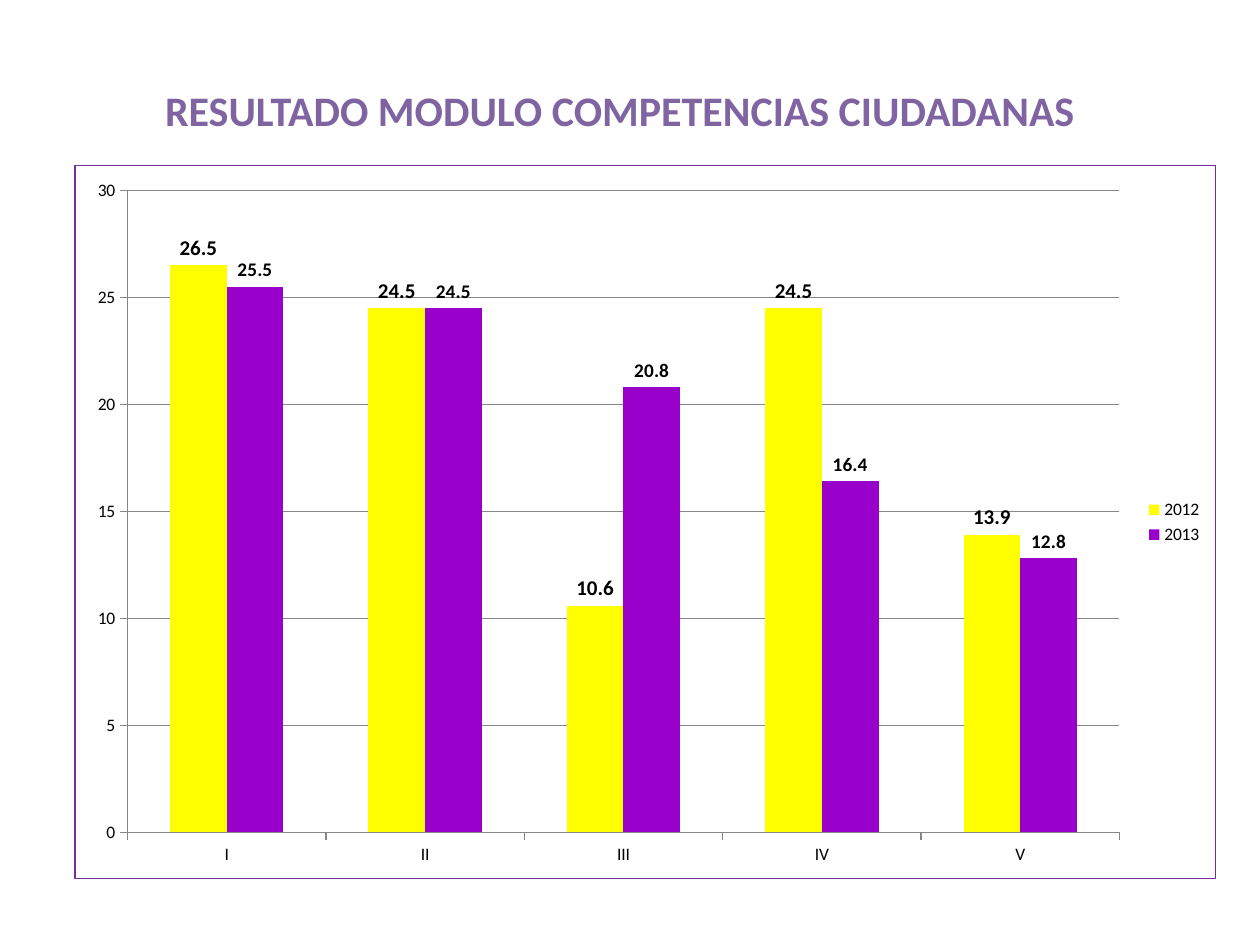
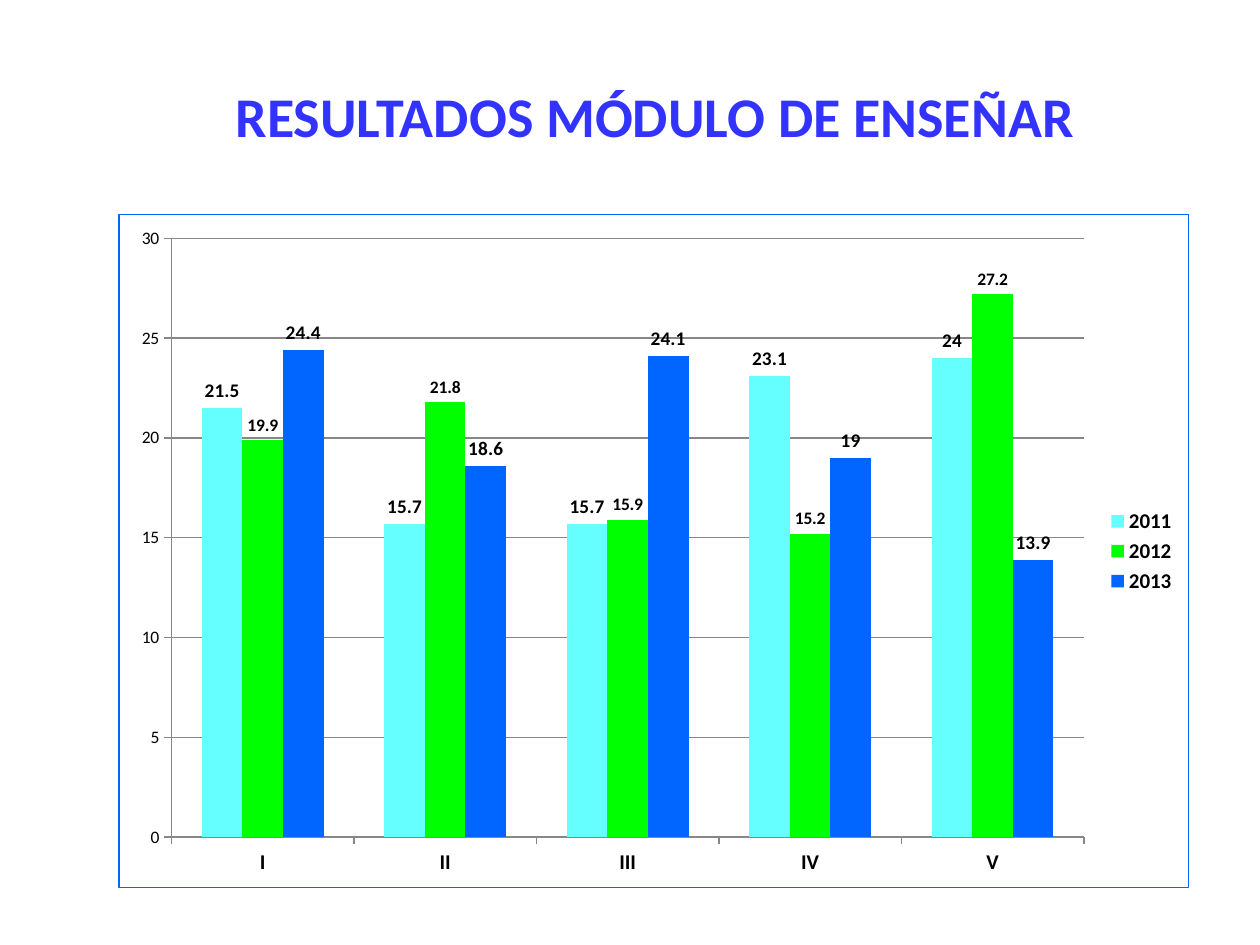
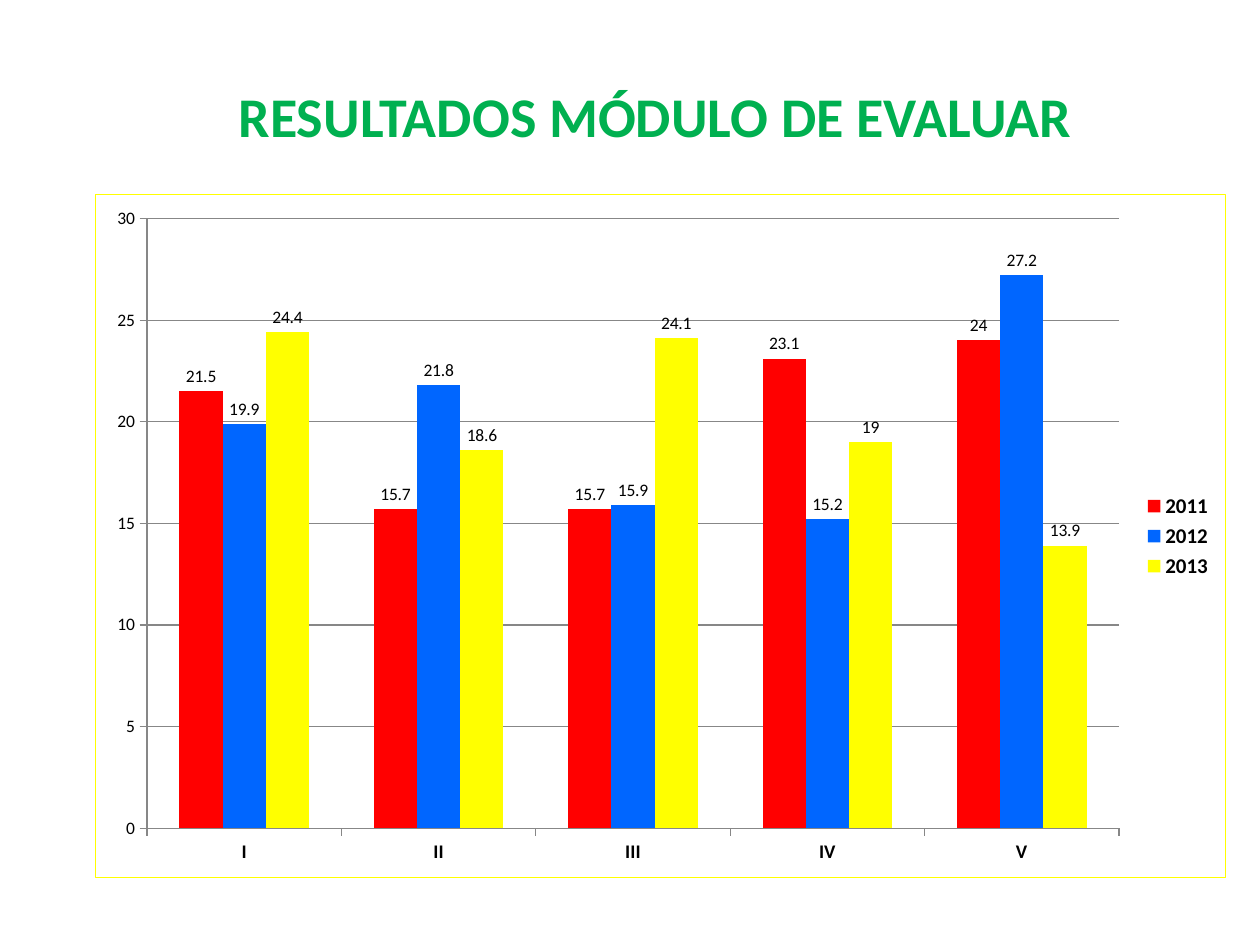
from pptx import Presentation
from pptx.chart.data import CategoryChartData
from pptx.dml.color import RGBColor
from pptx.enum.chart import XL_CHART_TYPE, XL_LABEL_POSITION, XL_LEGEND_POSITION, XL_TICK_MARK
from pptx.enum.text import MSO_ANCHOR, PP_ALIGN
from pptx.oxml import parse_xml
from pptx.oxml.ns import nsdecls
from pptx.util import Inches, Pt

FONT = "Calibri"
BLACK, GRID = "000000", "878787"
CATEGORIES = ["I", "II", "III", "IV", "V"]
YEARS_2011_2013 = {
    "2011": [21.5, 15.7, 15.7, 23.1, 24],
    "2012": [19.9, 21.8, 15.9, 15.2, 27.2],
    "2013": [24.4, 18.6, 24.1, 19, 13.9],
}
YEARS_2012_2013 = {
    "2012": [26.5, 24.5, 10.6, 24.5, 13.9],
    "2013": [25.5, 24.5, 20.8, 16.4, 12.8],
}
SMALL_TITLE = {"box": (0.7, 0.62, 8.44, 0.5), "size": 24}
LARGE_TITLE = {"box": (1.41, 0.6, 7.58, 0.94), "size": 32}

# Text styles are (size, bold); "plot" is left, top, width, height as shares of the chart.
SLIDES = [
    {
        "title": "RESULTADO MODULO COMPETENCIAS CIUDADANAS",
        "title_format": SMALL_TITLE, "title_color": "8064A2",
        "box": (0.59, 1.31, 9.06, 5.67), "plot": (0.046, 0.035, 0.87, 0.9),
        "border": "7030A0", "values": YEARS_2012_2013, "colors": ["FFFF00", "9900CC"],
        "labels": [(12, True), (11, True)], "category": (10, False), "legend": (10, False),
    },
    {
        "title": "RESULTADOS MÓDULO DE ENSEÑAR",
        "title_format": LARGE_TITLE, "title_color": "3333FF",
        "box": (0.94, 1.7, 8.5, 5.35), "plot": (0.049, 0.035, 0.853, 0.89),
        "border": "0066FF", "values": YEARS_2011_2013,
        "colors": ["66FFFF", "00FF00", "0066FF"],
        "labels": [(11, True), (10, True), (11, True)],
        "category": (12, True), "legend": (12, True),
    },
    {
        "title": "RESULTADOS MÓDULO DE EVALUAR",
        "title_format": LARGE_TITLE, "title_color": "00B050",
        "box": (0.75, 1.54, 8.98, 5.43), "plot": (0.046, 0.035, 0.86, 0.893),
        "border": "FFFF00", "values": YEARS_2011_2013,
        "colors": ["FF0000", "0066FF", "FFFF00"],
        "labels": [(10, False)] * 3, "category": (11, True), "legend": (12, True),
    },
]


def color(hex_code):
    return RGBColor.from_string(hex_code)


def format_font(font, size, bold=False, hex_code=BLACK):
    font.name, font.size, font.bold = FONT, Pt(size), bold
    font.color.rgb = color(hex_code)


def add_text(slide, text, box, size, bold=True, hex_code=BLACK):
    frame = slide.shapes.add_textbox(*map(Inches, box)).text_frame
    frame.word_wrap = True
    frame.vertical_anchor = MSO_ANCHOR.TOP
    paragraph = frame.paragraphs[0]
    paragraph.alignment = PP_ALIGN.CENTER
    run = paragraph.add_run()
    run.text = text
    format_font(run.font, size, bold, hex_code)


def place_plot(chart, shares):
    """Fix the inner plot area at the given shares of the chart."""
    plot_area = chart.element.xpath("c:chart/c:plotArea")[0]
    for layout in plot_area.xpath("c:layout"):
        plot_area.remove(layout)
    sizes = "".join(f'<c:{name} val="{share}"/>' for name, share in zip("xywh", shares))
    plot_area.insert(0, parse_xml(
        f'<c:layout {nsdecls("c")}><c:manualLayout><c:layoutTarget val="inner"/>'
        f'<c:xMode val="edge"/><c:yMode val="edge"/>{sizes}</c:manualLayout></c:layout>'))


def add_border(chart, hex_code):
    border = parse_xml(
        f'<c:spPr {nsdecls("c", "a")}><a:ln w="{Pt(0.75)}"><a:solidFill>'
        f'<a:srgbClr val="{hex_code}"/></a:solidFill></a:ln></c:spPr>')
    chart.element.xpath("c:txPr")[0].addprevious(border)


def format_axis(axis, style):
    axis.major_tick_mark = XL_TICK_MARK.OUTSIDE
    axis.minor_tick_mark = XL_TICK_MARK.NONE
    axis.format.line.color.rgb = color(GRID)
    axis.format.line.width = Pt(0.75)
    format_font(axis.tick_labels.font, *style)


def add_results_chart(slide, content):
    data = CategoryChartData(number_format="General")
    data.categories = CATEGORIES
    for year, values in content["values"].items():
        data.add_series(year, values)
    chart = slide.shapes.add_chart(
        XL_CHART_TYPE.COLUMN_CLUSTERED, *map(Inches, content["box"]), data).chart
    chart.has_title = False
    format_font(chart.font, 10)
    add_border(chart, content["border"])
    place_plot(chart, content["plot"])

    format_axis(chart.category_axis, content["category"])
    value_axis = chart.value_axis
    format_axis(value_axis, (10, False))
    value_axis.minimum_scale, value_axis.maximum_scale, value_axis.major_unit = 0, 30, 5
    value_axis.has_major_gridlines = True
    gridline = value_axis.major_gridlines.format.line
    gridline.color.rgb, gridline.width = color(GRID), Pt(0.75)

    chart.has_legend = True
    chart.legend.position = XL_LEGEND_POSITION.RIGHT
    chart.legend.include_in_layout = False
    format_font(chart.legend.font, *content["legend"])

    plot = chart.plots[0]
    plot.gap_width, plot.overlap, plot.vary_by_categories = 150, 0, False
    for series, fill, style in zip(plot.series, content["colors"], content["labels"]):
        series.invert_if_negative = False
        series.format.fill.solid()
        series.format.fill.fore_color.rgb = color(fill)
        labels = series.data_labels
        labels.show_value = True
        labels.position = XL_LABEL_POSITION.OUTSIDE_END
        format_font(labels.font, *style)


def main():
    presentation = Presentation()
    presentation.slide_width, presentation.slide_height = Inches(10), Inches(7.5)
    for content in SLIDES:
        slide = presentation.slides.add_slide(presentation.slide_layouts[6])
        add_text(slide, content["title"], hex_code=content["title_color"],
                 **content["title_format"])
        add_results_chart(slide, content)
    presentation.save("out.pptx")


if __name__ == "__main__":
    main()
